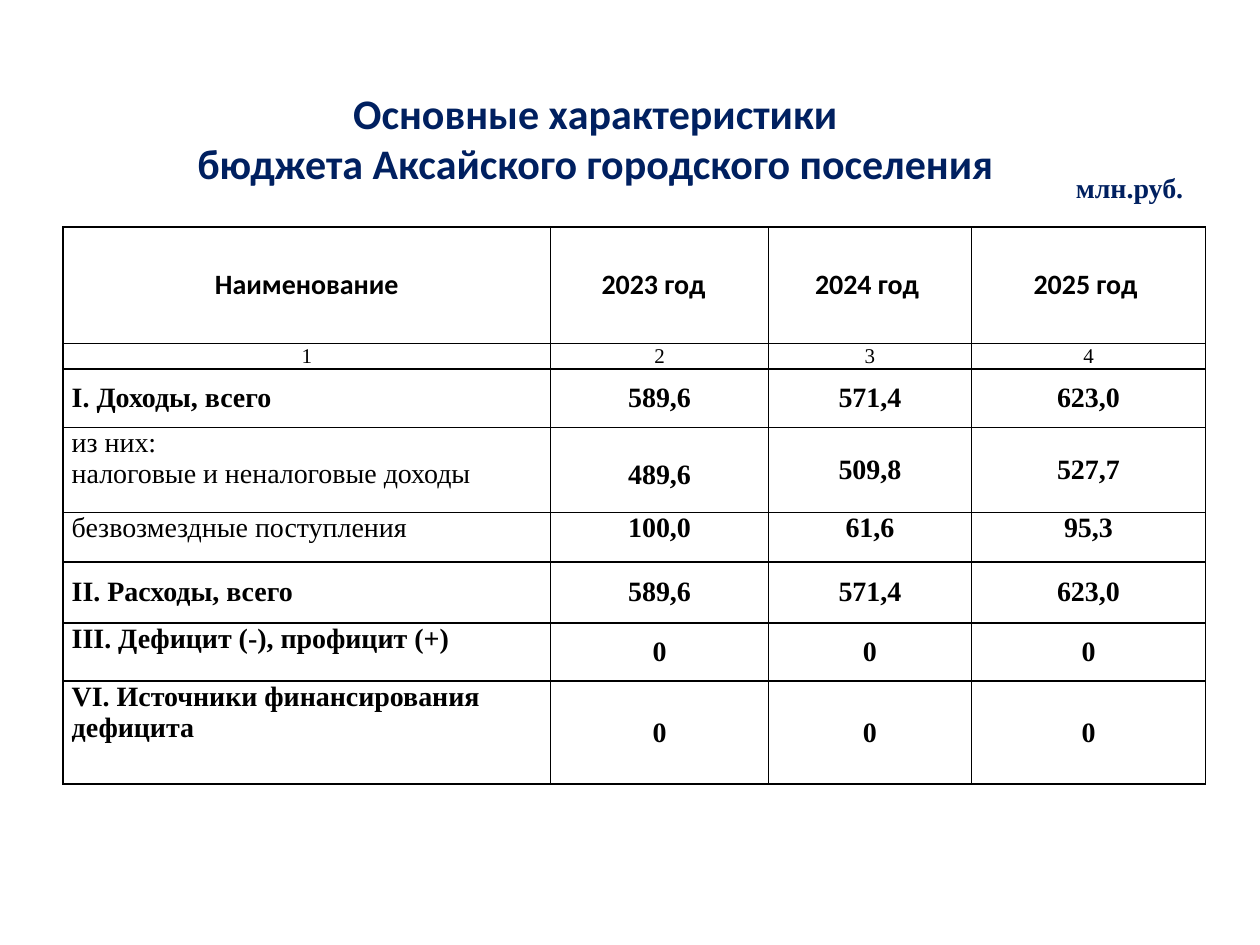
import pptx
import pptx.util
import pptx.dml.color
import pptx.enum.text
import lxml.etree

Pt = pptx.util.Pt
Align = pptx.enum.text.PP_ALIGN
Mid = pptx.enum.text.MSO_ANCHOR.MIDDLE
Top = pptx.enum.text.MSO_ANCHOR.TOP


def tint(code):
    return pptx.dml.color.RGBColor.from_string(code)


def write(frame, lines, face, size, bold, code, align):
    frame.text = "\n".join(lines)
    for para in frame.paragraphs:
        para.alignment = align
        for run in para.runs:
            look = {"name": face, "size": Pt(size), "bold": bold}
            for key, value in look.items():
                setattr(run.font, key, value)
            run.font.color.rgb = tint(code)


deck = pptx.Presentation()
deck.slide_width, deck.slide_height = Pt(720), Pt(540)
slide = deck.slides.add_slide(deck.slide_layouts[6])

labels = [
    (78.5, 39.6, 523.4, 77.8, Mid, "Calibri", 24, Align.CENTER,
     "Основные характеристики\vбюджета Аксайского городского поселения"),
    (607.7, 94, 112.3, 26, Top, "Times New Roman", 16, Align.LEFT, "млн.руб."),
]
for left, top, width, height, anchor, face, size, align, text in labels:
    box = slide.shapes.add_textbox(Pt(left), Pt(top), Pt(width), Pt(height))
    box.text_frame.word_wrap = True
    box.text_frame.vertical_anchor = anchor
    write(box.text_frame, [text], face, size, True, "002060", align)

rows = [
    (66.8, Mid, Mid, ["Наименование"], "2023 год", "2024 год", "2025 год"),
    (13.4, Mid, Mid, ["1"], "2", "3", "4"),
    (33.6, Mid, Mid, ["I. Доходы, всего"], "589,6", "571,4", "623,0"),
    (48.4, Top, Mid, ["из них:", "налоговые и неналоговые доходы"],
     "489,6", "509,8", "527,7"),
    (28.3, Top, Top, ["безвозмездные поступления"], "100,0", "61,6", "95,3"),
    (35, Mid, Mid, ["II. Расходы, всего"], "589,6", "571,4", "623,0"),
    (33.2, Top, Mid, ["III. Дефицит (-), профицит (+)"], "0", "0", "0"),
    (58.9, Top, Mid, ["VI. Источники финансирования дефицита"], "0", "0", "0"),
]
cols = [278.6, 124.6, 115.9, 133.9]
plain = (1, 3, 4)
pads = [3.6, 10.6, 7, 7]

frame = slide.shapes.add_table(
    len(rows), len(cols), Pt(36), Pt(129.6),
    Pt(sum(cols)), Pt(sum(row[0] for row in rows)))
table = frame.table
table.first_row = table.horz_banding = False
for col, width in enumerate(cols):
    table.columns[col].width = Pt(width)

for line, (height, first, rest, name, *values) in enumerate(rows):
    table.rows[line].height = Pt(height)
    for col, words in enumerate([name] + [[value] for value in values]):
        cell = table.cell(line, col)
        side = 3.6 if line < 2 else 5
        form = {
            "margin_left": Pt(side),
            "margin_right": Pt(side if line else pads[col]),
            "margin_top": 0,
            "margin_bottom": 0,
            "vertical_anchor": rest if col else first,
        }
        if (line, col) == (3, 1):
            form.update(margin_top=Pt(18), vertical_anchor=Top)
        for key, value in form.items():
            setattr(cell, key, value)
        write(cell.text_frame, words,
              "Times New Roman" if line else "Calibri",
              12 if line == 1 else 16,
              line != 1 and (col > 0 or line not in plain),
              "000000",
              Align.CENTER if col or line < 2 else Align.LEFT)
        props = cell._tc.get_or_add_tcPr()
        for edge in "LRTB":
            rule = lxml.etree.SubElement(
                props, pptx.oxml.ns.qn("a:ln" + edge), w=str(Pt(1)))
            fill = lxml.etree.SubElement(rule, pptx.oxml.ns.qn("a:solidFill"))
            lxml.etree.SubElement(fill, pptx.oxml.ns.qn("a:srgbClr"), val="000000")
        cell.fill.background()

deck.save("out.pptx")
